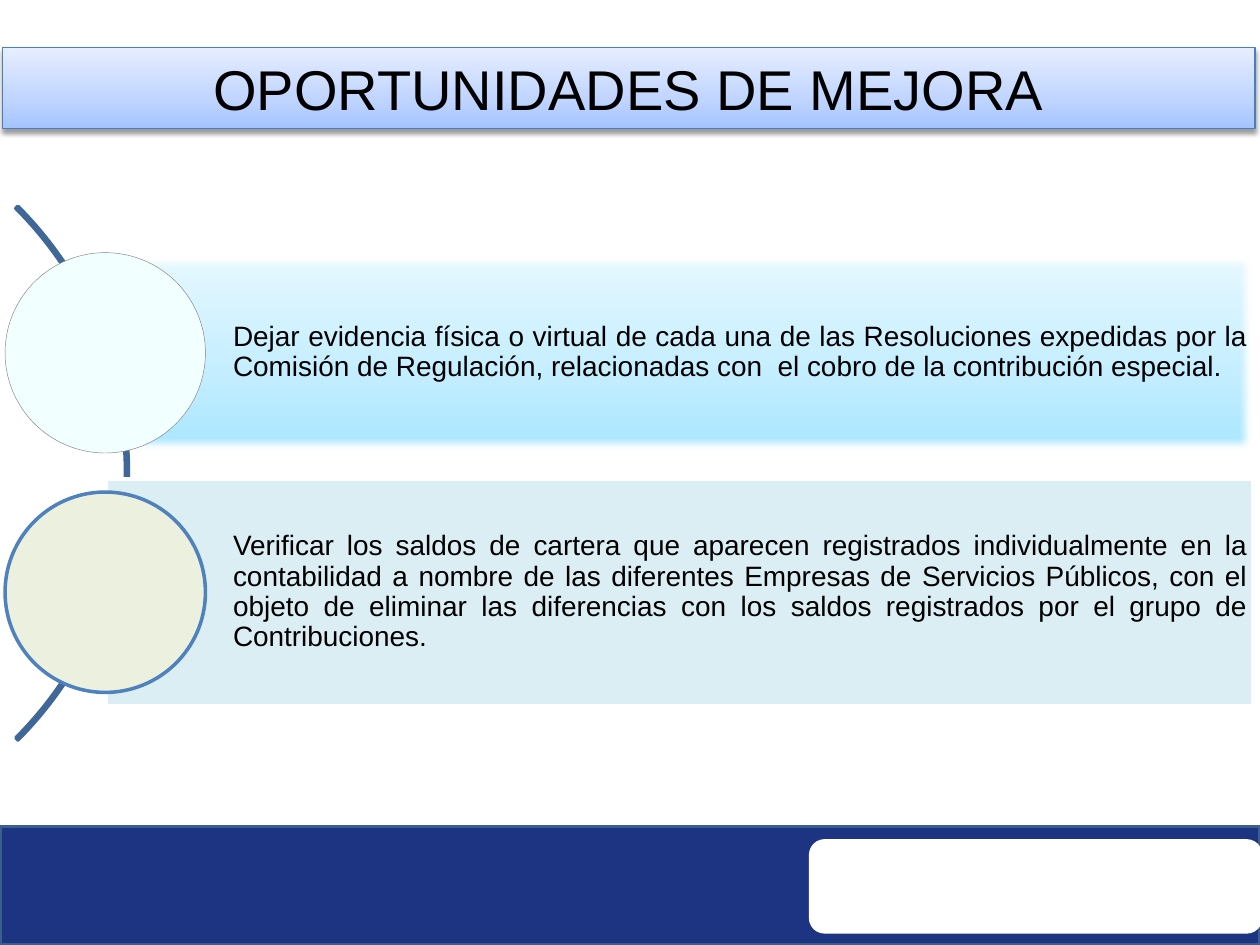
import copy

import pptx
import pptx.dml.color
import pptx.enum.shapes
import pptx.enum.text
import pptx.oxml
import pptx.oxml.ns
import pptx.util

Inches = pptx.util.Inches
Pt = pptx.util.Pt
SHAPE = pptx.enum.shapes.MSO_SHAPE
ALIGN = pptx.enum.text.PP_ALIGN
ANCHOR = pptx.enum.text.MSO_ANCHOR
qn = pptx.oxml.ns.qn


def color(value):
    return pptx.dml.color.RGBColor.from_string(value)


def write(frame, text, size=16, font="Arial", ink="000000", align=ALIGN.JUSTIFY,
          anchor=ANCHOR.MIDDLE, spacing=None, insets=(0.1, 0.05, 0.1, 0.05)):
    frame.word_wrap = True
    frame.vertical_anchor = anchor
    (frame.margin_left, frame.margin_top,
     frame.margin_right, frame.margin_bottom) = map(Inches, insets)
    paragraph = frame.paragraphs[0]
    paragraph.text = text
    paragraph.alignment = align
    paragraph.line_spacing = spacing
    paragraph.font.size = Pt(size)
    paragraph.font.name = font
    paragraph.font.color.rgb = color(ink)


class Board:
    border = "4F81BD"
    positions = (0, 0.35, 1)

    def __init__(self, slide):
        self.slide = slide

    def shape(self, kind, box, fill=None, line=None, width=2):
        item = self.slide.shapes.add_shape(kind, *map(Inches, box))
        item.shadow.inherit = False
        if fill is None:
            item.fill.background()
        elif isinstance(fill, str):
            item.fill.solid()
            item.fill.fore_color.rgb = color(fill)
        else:
            self.gradient(item, fill)
        if line:
            item.line.color.rgb = color(line)
            item.line.width = Pt(width)
        else:
            item.line.fill.background()
        return item

    def gradient(self, item, shades):
        item.fill.gradient()
        item.fill.gradient_angle = 90
        stops = item._element.spPr.find(".//" + qn("a:gsLst"))
        stops.append(copy.deepcopy(stops[-1]))
        for stop, position, shade in zip(item.fill.gradient_stops, self.positions, shades):
            stop.position = position
            stop.color.rgb = color(shade)

    def effect(self, item, tag, content="", **attributes):
        values = " ".join(f'{name}="{value}"' for name, value in attributes.items())
        namespace = pptx.oxml.ns.nsdecls("a")
        element = pptx.oxml.parse_xml(f"<a:{tag} {namespace} {values}>{content}</a:{tag}>")
        item._element.spPr.find(qn("a:effectLst")).append(element)

    def title(self, text, box, shades):
        banner = self.shape(SHAPE.RECTANGLE, box, shades, "4B7EBC", 0.75)
        self.effect(banner, "outerShdw",
                    '<a:srgbClr val="000000"><a:alpha val="38000"/></a:srgbClr>',
                    blurRad=Pt(3.1), dist=Pt(1.6), dir=5400000, rotWithShape=0)
        write(banner.text_frame, text, size=32, align=ALIGN.CENTER, anchor=ANCHOR.TOP)

    def arc(self, box):
        curve = self.shape(SHAPE.BLOCK_ARC, box, line="3F6797")
        for index, value in enumerate((189, 27, 0.004)):
            curve.adjustments[index] = value

    def finding(self, text, top, height, fill, line, width, disc, rim, rim_width, soft=0):
        box = (0.84, top, 9.1, height)
        panel = self.shape(SHAPE.RECTANGLE, box, fill, line, width)
        if soft:
            self.effect(panel, "softEdge", rad=Pt(soft))
        label = self.slide.shapes.add_textbox(*map(Inches, box))
        write(label.text_frame, text, spacing=0.9, insets=(1.01, 0.04, 0.04, 0.04))
        diameter = 1.59
        middle = top + height / 2
        self.shape(SHAPE.OVAL, (0.04, middle - diameter / 2, diameter, diameter),
                   disc, rim, rim_width)


def main():
    deck = pptx.Presentation()
    deck.slide_width, deck.slide_height = Inches(10), Inches(7.5)
    board = Board(deck.slides.add_slide(deck.slide_layouts[6]))

    board.shape(SHAPE.RECTANGLE, (0, 6.56, 10, 0.94), "1C3481", "3A5F8C")
    board.shape(SHAPE.ROUNDED_RECTANGLE, (6.42, 6.66, 3.6, 0.75), "FFFFFF")
    board.title("OPORTUNIDADES DE MEJORA", (0.02, 0.38, 9.94, 0.64),
                ("A4C4FF", "BFD4FF", "E6EEFF"))
    board.arc((-4.97, 0.76, 5.99, 5.99))
    board.finding(
        "Dejar evidencia física o virtual de cada una de las Resoluciones expedidas "
        "por la Comisión de Regulación, relacionadas con  el cobro de la "
        "contribución especial.",
        2.02, 1.56, ("A7E6FF", "C1EDFF", "E7F8FF"), "46AAC5", 0.75,
        "F2FFFF", "808080", 0.25, soft=5)
    board.finding(
        "Verificar los saldos de cartera que aparecen registrados individualmente "
        "en la contabilidad a nombre de las diferentes Empresas de Servicios "
        "Públicos, con el objeto de eliminar las diferencias con los saldos "
        "registrados por el grupo de Contribuciones.",
        3.8, 1.8, "DBEEF4", "FFFFFF", 2, "EBF1DE", board.border, 2)

    deck.save("out.pptx")


if __name__ == "__main__":
    main()
